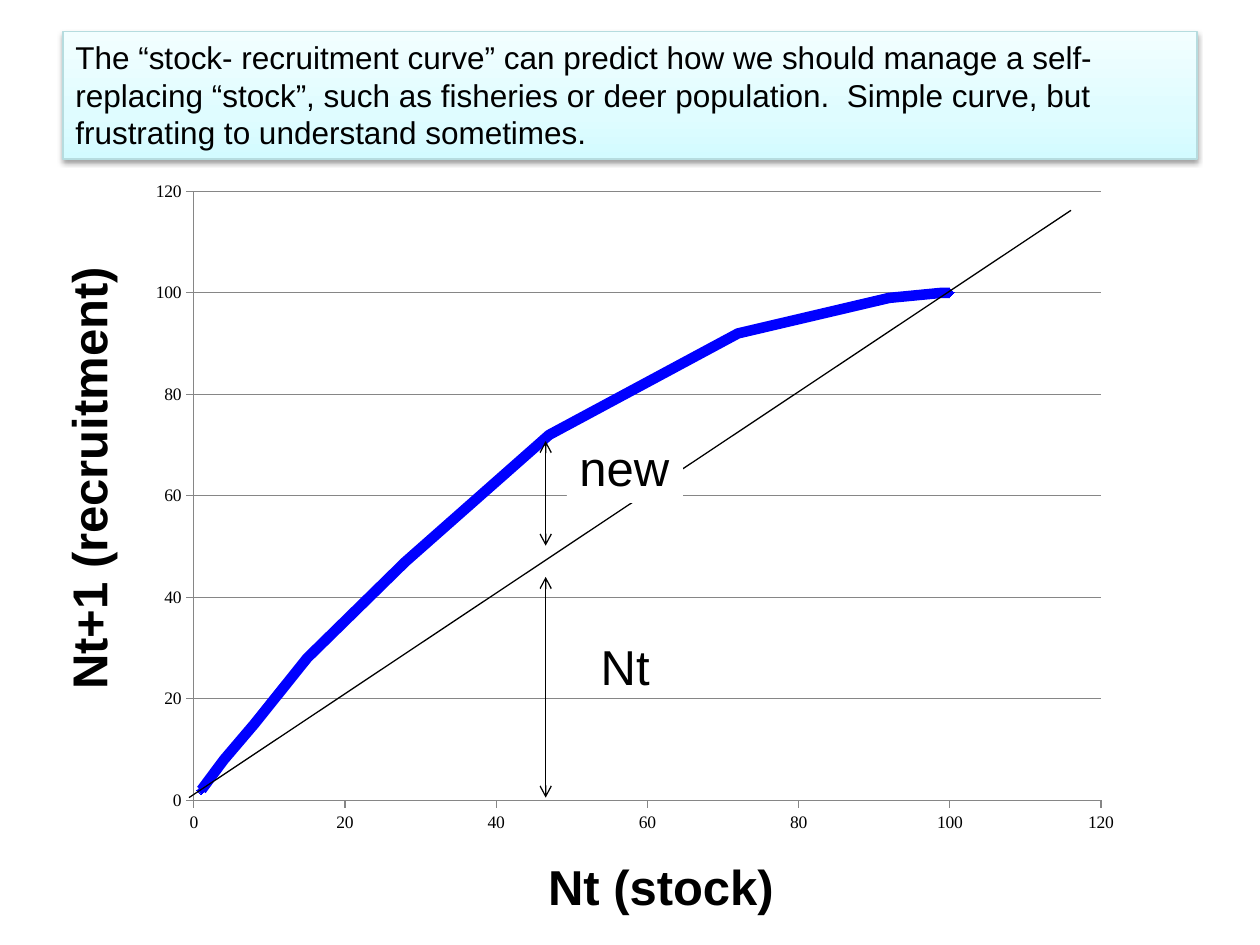
from copy import deepcopy
from dataclasses import dataclass

from lxml.etree import SubElement
from pptx import Presentation
from pptx.chart.data import XyChartData
from pptx.dml.color import RGBColor
from pptx.enum.chart import XL_CHART_TYPE, XL_MARKER_STYLE, XL_TICK_MARK
from pptx.enum.shapes import MSO_CONNECTOR, MSO_SHAPE
from pptx.enum.text import MSO_ANCHOR, MSO_AUTO_SIZE, PP_ALIGN
from pptx.oxml import parse_xml
from pptx.oxml.ns import qn
from pptx.util import Cm, Pt


@dataclass(frozen=True)
class Theme:
    font: str = "Arial"
    chart_font: str = "Times New Roman"
    ink: str = "000000"
    paper: str = "FFFFFF"
    curve: str = "0000FF"
    grid: str = "868686"
    banner_line: str = "B6DCDF"
    banner_stops: tuple = ((0, "D3FBFF"), (0.35, "DFFCFF"), (1, "F2FEFF"))
    label_size: int = 28
    banner_size: int = 18
    tick_size: int = 10
    thin: float = 0.75
    thick: float = 6


SHADOW = (
    '<a:effectLst xmlns:a="http://schemas.openxmlformats.org/drawingml/2006/main">'
    '<a:outerShdw blurRad="39370" dist="20320" dir="5400000" rotWithShape="0">'
    '<a:srgbClr val="000000"><a:alpha val="38000"/></a:srgbClr>'
    "</a:outerShdw></a:effectLst>"
)


def color(value):
    return RGBColor.from_string(value)


def style_line(line, value, width):
    line.color.rgb = color(value)
    line.width = Pt(width)


def write(shape, text, *, font, size, ink, bold=False, wrap=False):
    frame = shape.text_frame
    frame.word_wrap = wrap
    frame.auto_size = MSO_AUTO_SIZE.SHAPE_TO_FIT_TEXT
    frame.vertical_anchor = MSO_ANCHOR.TOP
    paragraph = frame.paragraphs[0]
    paragraph.alignment = PP_ALIGN.LEFT
    run = paragraph.add_run()
    run.text = text
    run.font.name = font
    run.font.size = Pt(size)
    run.font.bold = bold
    run.font.color.rgb = color(ink)


class SlideBuilder:
    def __init__(self, slide, theme):
        self.slide = slide
        self.theme = theme

    def banner(self, text, box):
        theme = self.theme
        shape = self.slide.shapes.add_shape(MSO_SHAPE.RECTANGLE, *map(Cm, box))
        shape.fill.gradient()
        shape.fill.gradient_angle = 90
        first_stop = next(shape._element.spPr.iter(qn("a:gs")))
        first_stop.addnext(deepcopy(first_stop))
        for stop, (position, value) in zip(shape.fill.gradient_stops, theme.banner_stops):
            stop.position = position
            stop.color.rgb = color(value)
        style_line(shape.line, theme.banner_line, theme.thin)
        shape._element.spPr.append(parse_xml(SHADOW))
        write(shape, text, font=theme.font, size=theme.banner_size, ink=theme.ink, wrap=True)

    def label(self, text, box, bold=False, rotation=0, fill=None):
        theme = self.theme
        if fill:
            shape = self.slide.shapes.add_shape(MSO_SHAPE.RECTANGLE, *map(Cm, box))
            shape.shadow.inherit = False
            shape.fill.solid()
            shape.fill.fore_color.rgb = color(fill)
            shape.line.fill.background()
        else:
            shape = self.slide.shapes.add_textbox(*map(Cm, box))
        shape.rotation = rotation
        write(shape, text, font=theme.font, size=theme.label_size, ink=theme.ink, bold=bold)

    def line(self, start, end, arrows=False):
        connector = self.slide.shapes.add_connector(
            MSO_CONNECTOR.STRAIGHT, *map(Cm, start + end))
        style_line(connector.line, self.theme.ink, self.theme.thin)
        properties = connector._element.spPr
        if arrows:
            outline = properties.find(qn("a:ln"))
            for tag in ("a:headEnd", "a:tailEnd"):
                SubElement(outline, qn(tag), type="arrow")
        SubElement(properties, qn("a:effectLst"))

    def curve_chart(self, points, box, plot):
        """Draw the smooth curve; plot gives the inner plot area as shares of the chart."""
        theme = self.theme
        data = XyChartData()
        series_data = data.add_series("Series 1")
        for stock, recruitment in points:
            series_data.add_data_point(stock, recruitment)
        chart = self.slide.shapes.add_chart(
            XL_CHART_TYPE.XY_SCATTER_SMOOTH, *map(Cm, box), data).chart
        chart.has_title = False
        chart.has_legend = False
        chart.font.name = theme.chart_font
        chart.font.size = Pt(theme.tick_size)
        chart.font.color.rgb = color(theme.ink)

        for axis in (chart.category_axis, chart.value_axis):
            axis.minimum_scale, axis.maximum_scale, axis.major_unit = 0, 120, 20
            axis.major_tick_mark = XL_TICK_MARK.OUTSIDE
            axis.minor_tick_mark = XL_TICK_MARK.NONE
            axis.has_major_gridlines = False
            axis.tick_labels.number_format = "General"
            axis.tick_labels.number_format_is_linked = False
            style_line(axis.format.line, theme.grid, theme.thin)
        chart.value_axis.has_major_gridlines = True
        style_line(chart.value_axis.major_gridlines.format.line, theme.grid, theme.thin)

        chart.plots[0].vary_by_categories = False
        series = chart.plots[0].series[0]
        series.smooth = True
        style_line(series.format.line, theme.curve, theme.thick)
        series.marker.style = XL_MARKER_STYLE.DIAMOND
        series.marker.size = 5
        series.marker.format.fill.solid()
        series.marker.format.fill.fore_color.rgb = color(theme.curve)
        style_line(series.marker.format.line, theme.curve, theme.thin)

        plot_area = chart._chartSpace.chart.plotArea
        for old_layout in plot_area.findall(qn("c:layout")):
            plot_area.remove(old_layout)
        layout = plot_area.makeelement(qn("c:layout"))
        plot_area.insert(0, layout)
        manual = SubElement(layout, qn("c:manualLayout"))
        settings = [("layoutTarget", "inner"), ("xMode", "edge"), ("yMode", "edge")]
        for name, value in settings + list(zip("xywh", plot)):
            SubElement(manual, qn(f"c:{name}"), val=str(value))


def main():
    theme = Theme()
    presentation = Presentation()
    presentation.slide_width, presentation.slide_height = Cm(25.4), Cm(19.05)
    slide = presentation.slides.add_slide(presentation.slide_layouts[6])
    builder = SlideBuilder(slide, theme)

    stock = (1, 2, 4, 8, 15, 28, 47, 72, 92, 99, 100, 100, 100)
    recruitment = (2, 4, 8, 15, 28, 47, 72, 92, 99, 100, 100, 100, 100)
    builder.curve_chart(zip(stock, recruitment), (2.74, 3.38, 20.12, 13.67),
                        plot=(0.058, 0.035, 0.909, 0.898))
    builder.banner(
        "The “stock- recruitment curve” can predict how we should manage a "
        "self-replacing “stock”, such as fisheries or deer population.  "
        "Simple curve, but frustrating to understand sometimes.",
        (1.27, 0.64, 22.86, 2.57))
    builder.label("Nt (stock)", (10.8, 17.15, 5.11, 1.45), bold=True)
    builder.label("Nt+1 (recruitment)", (-2.79, 8.86, 9.14, 1.45), bold=True, rotation=270)

    baseline, arrow_x = 16.08, 11
    builder.line((3.81, baseline), (21.59, 4.24))
    for top, bottom in ((11.63, baseline), (8.89, 11)):
        builder.line((arrow_x, top), (arrow_x, bottom), arrows=True)
    builder.label("Nt", (11.86, 12.7, 1.5, 1.45))
    builder.label("new", (11.43, 8.69, 2.34, 1.45), fill=theme.paper)

    presentation.save("out.pptx")


if __name__ == "__main__":
    main()
